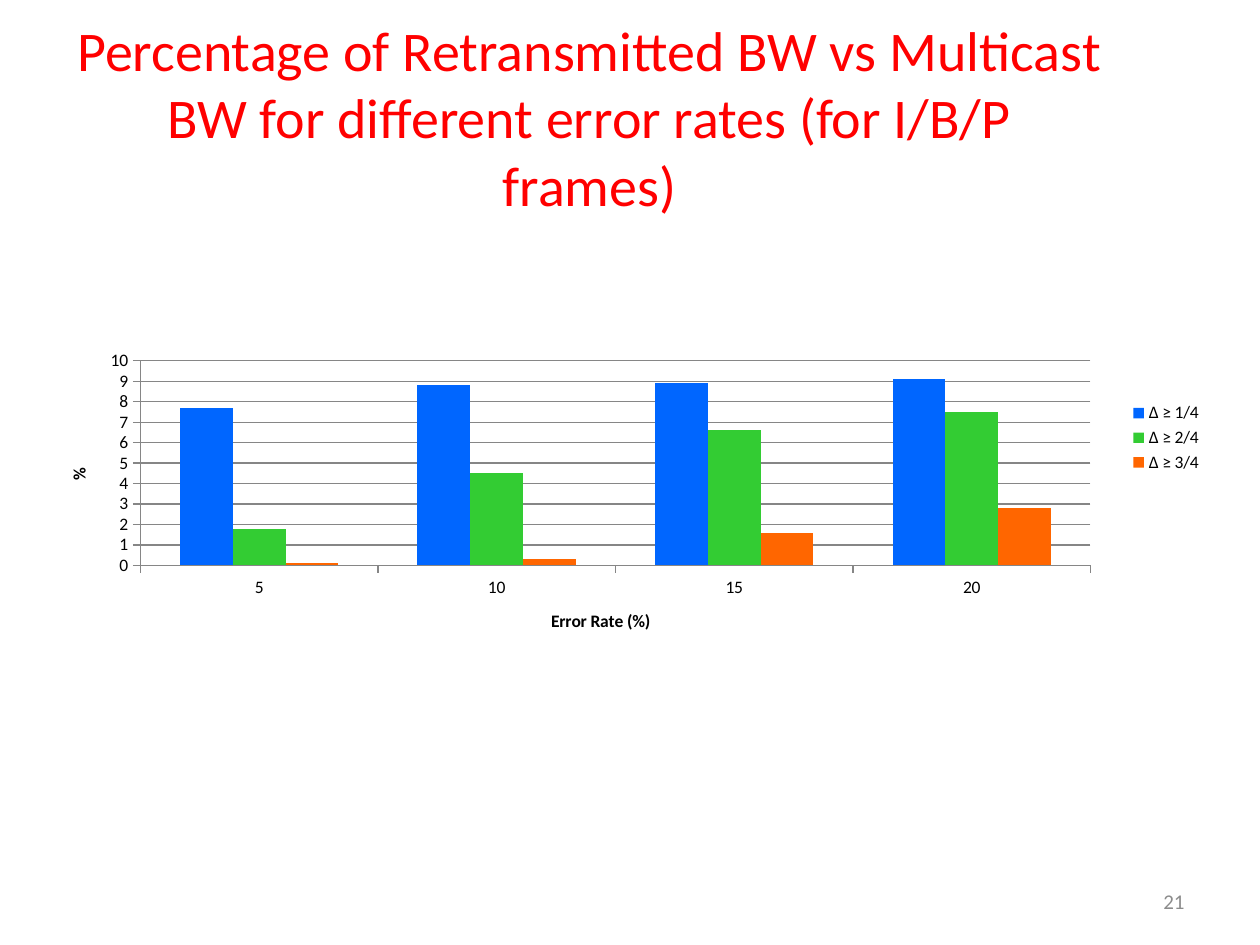
import pptx
import pptx.chart.data
import pptx.dml.color
import pptx.enum.chart
import pptx.enum.text
import pptx.oxml
import pptx.oxml.ns
import pptx.util
from pptx.util import Cm, Pt

# Content
FONT = "Calibri"
HEADING = ("Percentage of Retransmitted BW vs Multicast BW "
           "for different error rates (for I/B/P frames)")
PAGE_NUMBER = "21"
ERROR_RATES = ["5", "10", "15", "20"]
THRESHOLDS = [
    ("∆ ≥ 1/4", "0066FF", (7.7, 8.8, 8.9, 9.1)),
    ("∆ ≥ 2/4", "33CC33", (1.8, 4.5, 6.6, 7.5)),
    ("∆ ≥ 3/4", "FF6600", (0.1, 0.3, 1.6, 2.8)),
]
PLOT_AREA = {"x": 0.066, "y": 0.32, "w": 0.826, "h": 0.479}
GRAY = "868686"


def color(hex_code):
    return pptx.dml.color.RGBColor.from_string(hex_code)


def style(font, size, hex_code, bold=False):
    font.name, font.size, font.bold = FONT, Pt(size), bold
    font.color.rgb = color(hex_code)


def add_text(slide, text, box, size, hex_code, align):
    frame = slide.shapes.add_textbox(*map(Cm, box)).text_frame
    frame.word_wrap = True
    frame.vertical_anchor = pptx.enum.text.MSO_ANCHOR.MIDDLE
    paragraph = frame.paragraphs[0]
    paragraph.text = text
    paragraph.alignment = align
    style(paragraph.font, size, hex_code)


def style_axis(axis, title):
    axis.major_tick_mark = pptx.enum.chart.XL_TICK_MARK.OUTSIDE
    axis.minor_tick_mark = pptx.enum.chart.XL_TICK_MARK.NONE
    axis.format.line.color.rgb = color(GRAY)
    paragraph = axis.axis_title.text_frame.paragraphs[0]
    paragraph.text = title
    style(paragraph.font, 10, "000000", bold=True)


def place_plot(chart, area):
    """Fix the inner plot area as fractions of the chart."""
    plot_area = chart._chartSpace.chart.plotArea
    for old in plot_area.findall(pptx.oxml.ns.qn("c:layout")):
        plot_area.remove(old)
    settings = {"layoutTarget": "inner", "xMode": "edge", "yMode": "edge", **area}
    items = "".join(f'<c:{key} val="{value}"/>' for key, value in settings.items())
    plot_area.insert(0, pptx.oxml.parse_xml(
        f'<c:layout {pptx.oxml.ns.nsdecls("c")}>'
        f"<c:manualLayout>{items}</c:manualLayout></c:layout>"))


def add_bandwidth_chart(slide):
    data = pptx.chart.data.CategoryChartData()
    data.categories = ERROR_RATES
    for name, _, values in THRESHOLDS:
        data.add_series(name, values)
    chart = slide.shapes.add_chart(
        pptx.enum.chart.XL_CHART_TYPE.COLUMN_CLUSTERED,
        Cm(1.3), Cm(4.52), Cm(23.19), Cm(8.61), data).chart
    style(chart.font, 10, "000000")
    chart.has_title = False

    # Bars
    bars = chart.plots[0]
    bars.gap_width, bars.overlap = 150, 0
    bars.vary_by_categories = False
    for series, (_, hex_code, _) in zip(bars.series, THRESHOLDS):
        series.format.fill.solid()
        series.format.fill.fore_color.rgb = color(hex_code)

    # Axes
    style_axis(chart.category_axis, "Error Rate (%)")
    percent_axis = chart.value_axis
    style_axis(percent_axis, "%")
    percent_axis.minimum_scale, percent_axis.maximum_scale = 0, 10
    percent_axis.major_unit = 1
    percent_axis.tick_labels.number_format = "General"
    percent_axis.tick_labels.number_format_is_linked = False
    percent_axis.major_gridlines.format.line.color.rgb = color(GRAY)

    # Legend and plot area
    chart.has_legend = True
    chart.legend.position = pptx.enum.chart.XL_LEGEND_POSITION.RIGHT
    chart.legend.include_in_layout = False
    place_plot(chart, PLOT_AREA)


def main():
    deck = pptx.Presentation()
    deck.slide_width, deck.slide_height = Cm(25.4), Cm(19.05)
    slide = deck.slides.add_slide(deck.slide_layouts[6])
    align = pptx.enum.text.PP_ALIGN
    add_text(slide, HEADING, (1.27, 0.76, 21.23, 3.18), 32, "FF0000", align.CENTER)
    add_text(slide, PAGE_NUMBER, (18.2, 17.66, 5.93, 1.01), 12, "8C8C8C", align.RIGHT)
    add_bandwidth_chart(slide)
    deck.save("out.pptx")


if __name__ == "__main__":
    main()
